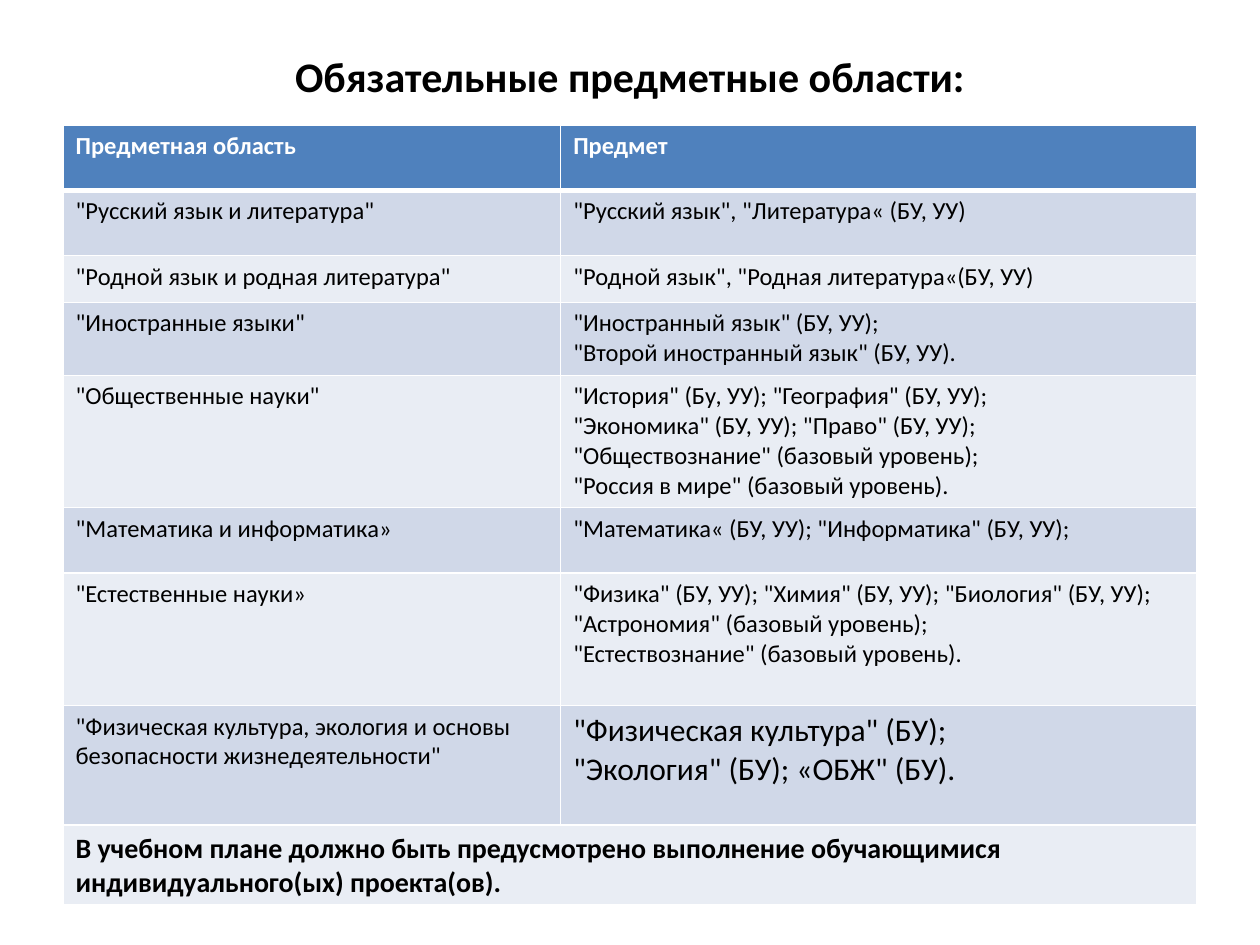
from lxml.etree import SubElement
from pptx import Presentation
from pptx.dml.color import RGBColor as Rgb
from pptx.enum.text import MSO_ANCHOR as Anchor, PP_ALIGN as Align
from pptx.oxml.ns import qn
from pptx.util import Inches, Pt

COLORS = {"header": "4F81BD", "dark": "D0D8E8", "light": "E9EDF4",
          "line": "FFFFFF", "text": "000000"}
HEADER = {"size": Pt(14), "bold": True, "color": "line"}
BODY = {"size": Pt(14), "bold": False, "color": "text"}
LARGE = {**BODY, "size": Pt(18)}
NOTE = {**BODY, "size": Pt(16), "bold": True}
TITLE = {**BODY, "size": Pt(24), "bold": True}

COLUMN_SHARES = (0.395, 0.505)
ROWS = [
    (0.52, HEADER, "Предметная область", "Предмет"),
    (0.52, BODY, '"Русский язык и литература"',
     '"Русский язык", "Литература« (БУ, УУ)'),
    (0.37, BODY, '"Родной язык и родная литература"',
     '"Родной язык", "Родная литература«(БУ, УУ)'),
    (0.58, BODY, '"Иностранные языки"',
     '"Иностранный язык" (БУ, УУ);\n"Второй иностранный язык" (БУ, УУ).'),
    (1.05, BODY, '"Общественные науки"',
     '"История" (Бу, УУ); "География" (БУ, УУ);\n'
     '"Экономика" (БУ, УУ); "Право" (БУ, УУ);\n'
     '"Обществознание" (базовый уровень);\n'
     '"Россия в мире" (базовый уровень).'),
    (0.52, BODY, '"Математика и информатика»',
     '"Математика« (БУ, УУ); "Информатика" (БУ, УУ);'),
    (1.05, BODY, '"Естественные науки»',
     '"Физика" (БУ, УУ); "Химия" (БУ, УУ); "Биология" (БУ, УУ);\n'
     '"Астрономия" (базовый уровень);\n"Естествознание" (базовый уровень).'),
    (0.95, LARGE,
     '"Физическая культура, экология и основы безопасности жизнедеятельности"',
     '"Физическая культура" (БУ);\n"Экология" (БУ); «ОБЖ" (БУ).'),
    (0.63, NOTE, "В учебном плане должно быть предусмотрено выполнение "
     "обучающимися индивидуального(ых) проекта(ов).", ""),
]


def write_text(frame, text, style, align=Align.LEFT):
    """Fill a text frame with one paragraph per line of text."""
    for index, line in enumerate(text.split("\n") if text else []):
        para = frame.add_paragraph() if index else frame.paragraphs[0]
        para.alignment = align
        span = para.add_run()
        span.text = line
        for name, value in {"name": "Calibri", **style}.items():
            if name == "color":
                span.font.color.rgb = Rgb.from_string(COLORS[value])
            else:
                setattr(span.font, name, value)


def paint_cell(cell, fill, bottom, top):
    """Give a cell its white borders and solid fill."""
    properties = cell._tc.get_or_add_tcPr()
    for side, width in {"L": 1, "R": 1, "T": top, "B": bottom}.items():
        line = SubElement(properties, qn(f"a:ln{side}"), w=str(Pt(width)))
        solid = SubElement(line, qn("a:solidFill"))
        SubElement(solid, qn("a:srgbClr"), val=COLORS["line"])
    cell.fill.solid()
    cell.fill.fore_color.rgb = Rgb.from_string(COLORS[fill])


def add_title(page, box):
    """Place the centred heading in its box."""
    frame = page.shapes.add_textbox(*box).text_frame
    frame.word_wrap = True
    frame.vertical_anchor = Anchor.MIDDLE
    write_text(frame, "Обязательные предметные области:", TITLE, Align.CENTER)


def add_subjects(page, box, page_width):
    """Place the table of subject areas in its box."""
    table = page.shapes.add_table(len(ROWS), len(COLUMN_SHARES), *box).table
    for column, share in zip(table.columns, COLUMN_SHARES):
        column.width = int(page_width * share)
    for index, (height, style, *texts) in enumerate(ROWS):
        table.rows[index].height = Inches(height)
        fill = ("dark" if index % 2 else "light") if index else "header"
        for column, text in enumerate(texts):
            cell = table.cell(index, column)
            paint_cell(cell, fill, 1 if index else 3, 3 if index == 1 else 1)
            cell_style = BODY if style is LARGE and column == 0 else style
            write_text(cell.text_frame, text, cell_style)
    last = len(ROWS) - 1
    table.cell(last, 0).merge(table.cell(last, 1))


def main():
    """Build the slide and save the deck."""
    deck = Presentation()
    deck.slide_width, deck.slide_height = Inches(10), Inches(7.5)
    page = deck.slides.add_slide(deck.slide_layouts[6])
    width, height = deck.slide_width, deck.slide_height
    left, inner = int(width * 0.05), int(width * 0.9)
    add_title(page, (left, int(height * 0.04), inner, int(height * 0.08)))
    table_height = Inches(sum(row[0] for row in ROWS))
    add_subjects(page, (left, Inches(0.99), inner, table_height), width)
    deck.save("out.pptx")


if __name__ == "__main__":
    main()
